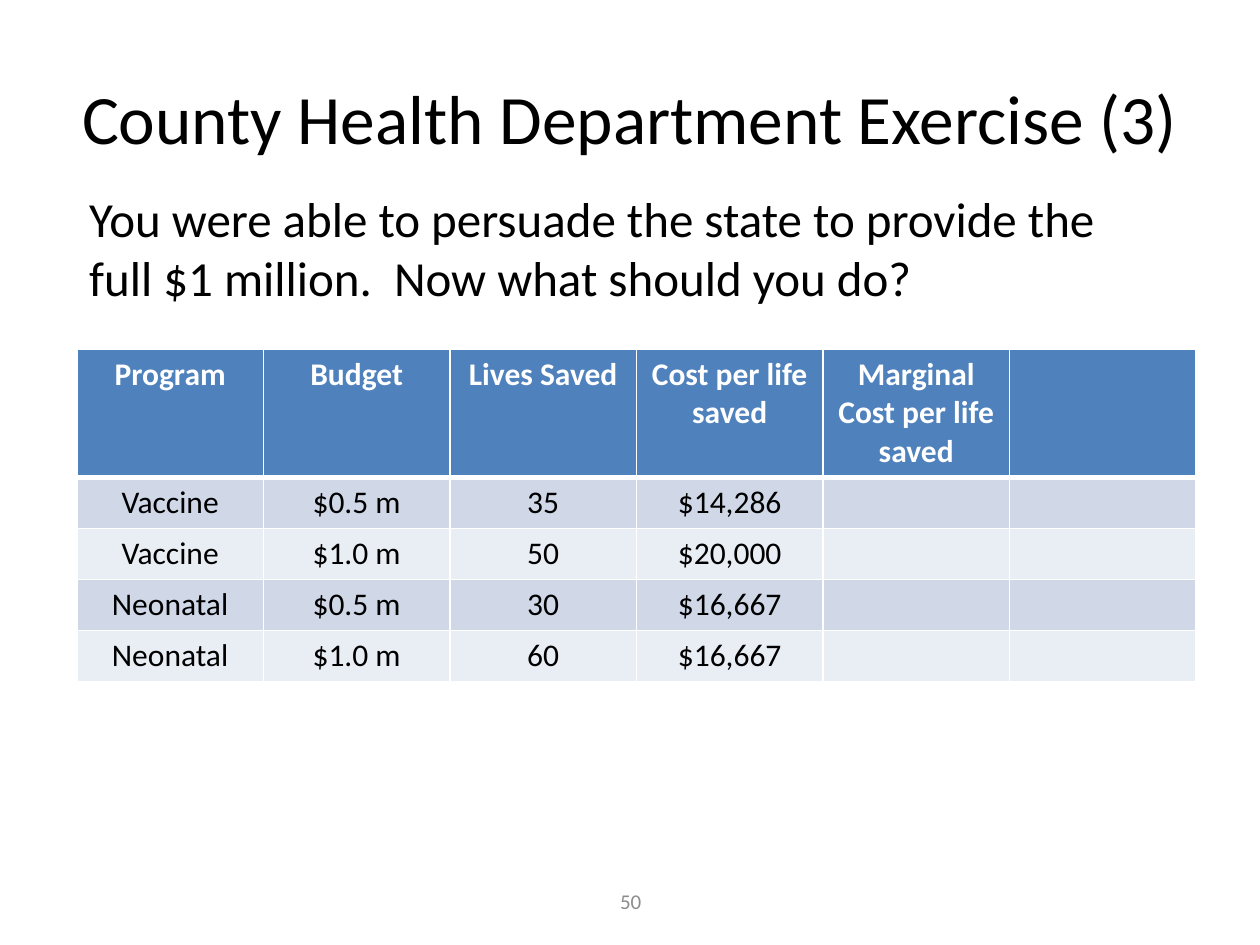
"""Build the county health department exercise slide with its program cost table."""
from dataclasses import dataclass

from lxml.etree import SubElement
from pptx import Presentation
from pptx.dml.color import RGBColor
from pptx.enum.text import MSO_ANCHOR as Anchor, PP_ALIGN as Align
from pptx.oxml.ns import qn
from pptx.slide import Slide
from pptx.table import _Cell as Cell
from pptx.text.text import _Paragraph as Paragraph
from pptx.util import Cm, Pt

BLACK = RGBColor(0x00, 0x00, 0x00)
WHITE = RGBColor(0xFF, 0xFF, 0xFF)
GRAY = RGBColor(0x8C, 0x8C, 0x8C)
HEADER_BLUE = RGBColor(0x4F, 0x81, 0xBD)
BANDS = (RGBColor(0xD0, 0xD8, 0xE8), RGBColor(0xE9, 0xED, 0xF4))

COLUMN_WIDTH = Cm(3.76)
HEADER_HEIGHT = Cm(2.57)
ROW_HEIGHT = Cm(1.03)
ROWS = (
    ("Program", "Budget", "Lives Saved", "Cost per life saved",
     "Marginal Cost per life saved", ""),
    ("Vaccine", "$0.5 m", "35", "$14,286", "", ""),
    ("Vaccine", "$1.0 m", "50", "$20,000", "", ""),
    ("Neonatal", "$0.5 m", "30", "$16,667", "", ""),
    ("Neonatal", "$1.0 m", "60", "$16,667", "", ""),
)


@dataclass(frozen=True)
class TextBlock:
    text: str
    left: float
    top: float
    width: float
    height: float
    size: float
    color: RGBColor = BLACK
    align: Align = Align.CENTER
    anchor: Anchor = Anchor.MIDDLE


BLOCKS = (
    TextBlock("County Health Department Exercise (3)", 1.27, 0.76, 22.86, 3.18, 39.6),
    TextBlock("50", 8.69, 17.65, 8.05, 1.02, 12, GRAY),
    TextBlock("You were able to persuade the state to provide the full $1 million.  "
              "Now what should you do?", 1.55, 3.68, 21.82, 2.64, 28,
              align=Align.LEFT, anchor=Anchor.TOP),
)


def write(para: Paragraph, text: str, align: Align, size: float,
          color: RGBColor, bold: bool = False) -> None:
    para.alignment = align
    span = para.add_run()
    span.text = text
    span.font.color.rgb = color
    for name, value in {"name": "Calibri", "size": Pt(size), "bold": bold}.items():
        setattr(span.font, name, value)


def draw_block(page: Slide, block: TextBlock) -> None:
    box = page.shapes.add_textbox(
        Cm(block.left), Cm(block.top), Cm(block.width), Cm(block.height))
    frame = box.text_frame
    for name, value in {"word_wrap": True, "vertical_anchor": block.anchor}.items():
        setattr(frame, name, value)
    write(frame.paragraphs[0], block.text, block.align, block.size, block.color)


def draw_borders(cell: Cell, widths: dict[str, float]) -> None:
    properties = cell._tc.get_or_add_tcPr()
    for side, width in widths.items():
        line = SubElement(properties, qn(f"a:ln{side}"), w=str(Pt(width)))
        fill = SubElement(line, qn("a:solidFill"))
        SubElement(fill, qn("a:srgbClr"), val=str(WHITE))


def draw_table(page: Slide) -> None:
    columns = len(ROWS[0])
    height = HEADER_HEIGHT + ROW_HEIGHT * (len(ROWS) - 1)
    table = page.shapes.add_table(
        len(ROWS), columns, Cm(1.55), Cm(7.04), COLUMN_WIDTH * columns, height).table
    for column in table.columns:
        column.width = COLUMN_WIDTH
    for index, values in enumerate(ROWS):
        header = index == 0
        table.rows[index].height = HEADER_HEIGHT if header else ROW_HEIGHT
        for cell, value in zip(table.rows[index].cells, values):
            draw_borders(cell, {"L": 1, "R": 1, "T": 3 if index == 1 else 1,
                                "B": 3 if header else 1})
            cell.fill.solid()
            cell.fill.fore_color.rgb = HEADER_BLUE if header else BANDS[(index - 1) % 2]
            if value:
                write(cell.text_frame.paragraphs[0], value, Align.CENTER, 18,
                      WHITE if header else BLACK, header)


def main() -> None:
    deck = Presentation()
    for name, value in {"slide_width": Cm(25.4), "slide_height": Cm(19.05)}.items():
        setattr(deck, name, value)
    page = deck.slides.add_slide(deck.slide_layouts[6])
    draw_table(page)
    for block in BLOCKS:
        draw_block(page, block)
    deck.save("out.pptx")


if __name__ == "__main__":
    main()
